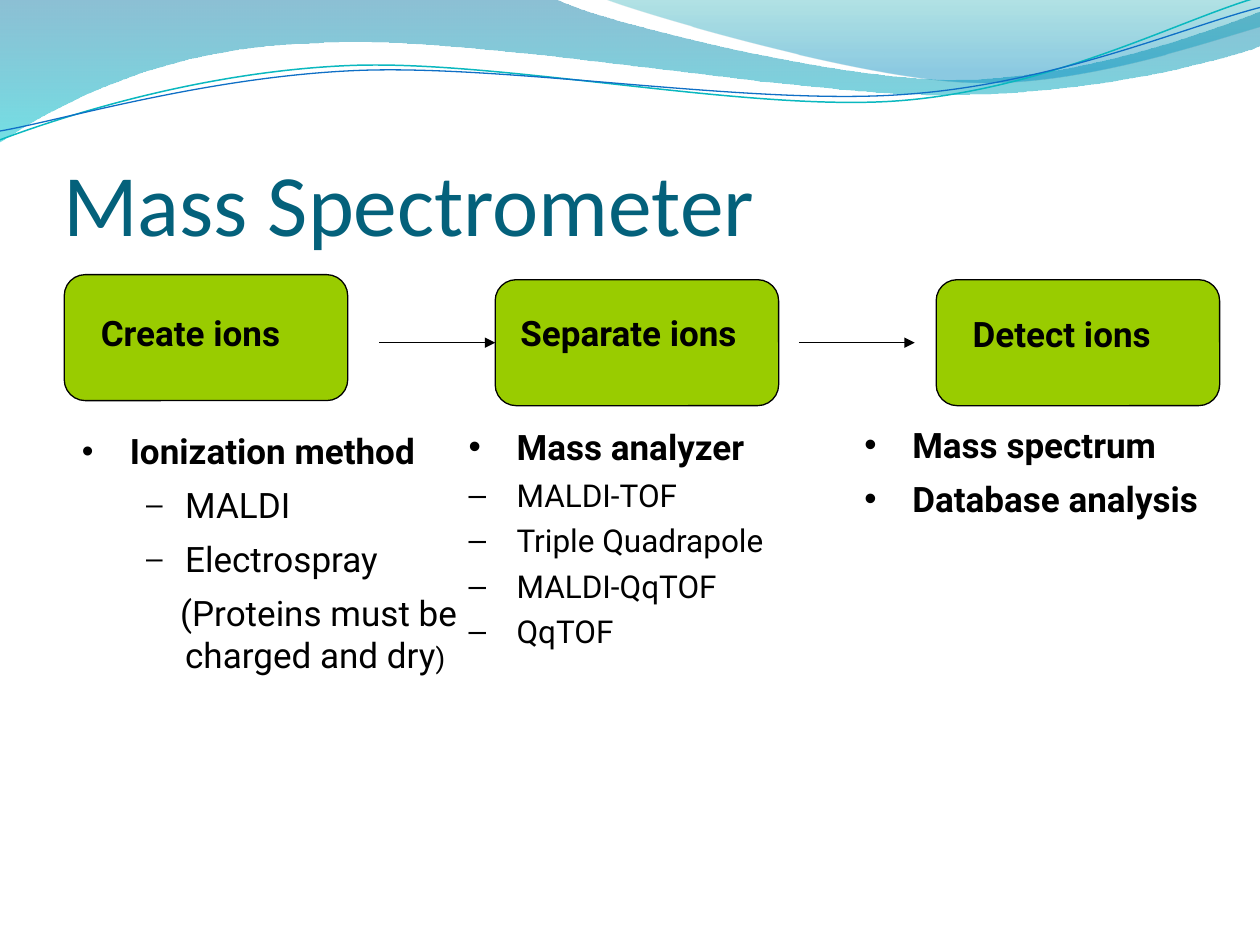
from math import cos, radians, sin

from lxml.etree import SubElement
from pptx import Presentation
from pptx.dml.color import RGBColor
from pptx.enum.shapes import MSO_CONNECTOR as Connector, MSO_SHAPE as Shape
from pptx.enum.text import MSO_ANCHOR as Anchor, MSO_AUTO_SIZE as AutoSize, PP_ALIGN as Align
from pptx.oxml.ns import qn
from pptx.util import Inches, Pt

BLACK = "000000"
GREEN = "99CC00"
BOX_WIDTH, BOX_HEIGHT = 2.25, 1
ARROW_Y, ARROW_LENGTH = 2.72, 0.92
RIPPLE_TILT = 2.7


def color(value):
    """Turn a hex string into a colour."""
    return RGBColor.from_string(value)


def place(shape, left, top, width, height):
    """Move and size a shape, in inches."""
    shape.left, shape.top = Inches(left), Inches(top)
    shape.width, shape.height = Inches(width), Inches(height)


def set_frame(frame, insets=(0, 0, 0.04, 0), anchor=Anchor.TOP):
    """Set wrapping, anchor and insets (left, top, right, bottom) of a text frame."""
    frame.word_wrap, frame.auto_size, frame.vertical_anchor = True, AutoSize.NONE, anchor
    (frame.margin_left, frame.margin_top,
     frame.margin_right, frame.margin_bottom) = map(Inches, insets)


def style_run(run, size=20, bold=False, font="Roboto", fill=BLACK):
    """Format one run."""
    run.font.size, run.font.bold, run.font.name = Pt(size), bold, font
    run.font.color.rgb = color(fill)


def set_indent(para, margin, indent, bullet=None, scale=100):
    """Give a paragraph its indents and its bullet, if any."""
    props = para._p.get_or_add_pPr()
    props.set("marL", str(Inches(margin)))
    props.set("indent", str(Inches(indent)))
    if not bullet:
        SubElement(props, qn("a:buNone"))
        return
    bullet_color = SubElement(props, qn("a:buClr"))
    SubElement(bullet_color, qn("a:srgbClr"), val=BLACK)
    SubElement(props, qn("a:buSzPct"), val=str(scale * 1000))
    SubElement(props, qn("a:buChar"), char=bullet)


def tilt(x, y, center_x, center_y):
    """Turn a point clockwise about a centre by the tilt of the ripples."""
    angle = radians(RIPPLE_TILT)
    across, down = x - center_x, y - center_y
    return (center_x + across * cos(angle) - down * sin(angle),
            center_y + across * sin(angle) + down * cos(angle))


def add_outline(page, start, segments, close, center=None):
    """Draw a freeform of lines (one point) and cubic curves (three points)."""
    points = [start] + [point for segment in segments
                        for point in zip(segment[::2], segment[1::2])]
    if center:
        points = [tilt(*point, *center) for point in points]
    corners = [(Inches(x), Inches(y)) for x, y in points]
    builder = page.shapes.build_freeform(*corners[0])
    builder.add_line_segments(corners[1:], close=close)
    shape = builder.convert_to_shape()
    shape.shadow.inherit = False
    lines = iter(list(shape._element.iter(qn("a:lnTo"))))
    for segment in segments:
        line = next(lines)
        if len(segment) == 6:
            line.tag = qn("a:cubicBezTo")
            for _ in range(2):
                control = next(lines)
                line.append(control[0])
                control.getparent().remove(control)
    return shape


def add_wave(page, start, segments, stops):
    """Fill a wave with a downward gradient of (position, colour, opacity) stops."""
    shape = add_outline(page, start, segments, True)
    shape.line.fill.background()
    shape.fill.gradient()
    shape.fill.gradient_angle = 270
    for stop, (position, value, opacity) in zip(shape.fill.gradient_stops, stops):
        stop.position = position
        stop.color.rgb = color(value)
        tint = stop._gs.find(qn("a:srgbClr"))
        SubElement(tint, qn("a:alpha"), val=str(opacity * 1000))


def add_ripple(page, center, start, curves, value, width):
    """Draw a thin curved line, tilted about its centre."""
    shape = add_outline(page, start, curves, False, center)
    shape.rotation = 360 - RIPPLE_TILT
    shape.fill.background()
    shape.line.color.rgb = color(value)
    shape.line.width = Pt(width)


def add_header(page):
    """Draw the waves and ripples along the top edge."""
    add_wave(page, (0, 0), [(4.4, -0.01), (4.76, 0.17, 6.64, 0.63, 7.58, 0.63),
                            (8.53, 0.63, 9.58, 0.26, 10, 0.09), (10.01, 0.36),
                            (9.83, 0.44, 8.7, 0.76, 7.46, 0.75),
                            (6.22, 0.75, 3.82, 0.28, 2.57, 0.34),
                            (1.29, 0.36, 0.46, 0.83, -0.01, 1.13)],
             [(0, "0074A1", 45), (1, "00C6CF", 55)])
    add_wave(page, (4.79, -0.01), [(5.09, 0.11, 6.82, 0.62, 7.69, 0.65),
                                   (8.56, 0.69, 9.61, 0.32, 10, 0.21), (10, 0)],
             [(0, "00A1A9", 30), (0.8, "008BBF", 45)])
    add_ripple(page, (4.99, 0.58), (0, 1.11), [(0.48, 0.93, 1.58, 0.57, 2.77, 0.52),
                                               (3.95, 0.47, 5.93, 0.89, 7.13, 0.8),
                                               (8.33, 0.71, 9.38, 0.15, 9.98, -0.02)],
               "0AB8BF", 0.85)
    add_ripple(page, (5, 0.59), (0, 1.04), [(0.47, 0.96, 1.64, 0.61, 2.83, 0.56),
                                            (4.03, 0.51, 5.97, 0.84, 7.17, 0.75),
                                            (8.36, 0.67, 9.41, 0.21, 10, 0.06)],
               "0F6FC6", 0.75)


def set_title(title, text, box):
    """Fill and format the title placeholder."""
    place(title, *box)
    frame = title.text_frame
    frame.text = text
    set_frame(frame, (0, 0.05, 0, 0), Anchor.BOTTOM)
    frame.paragraphs[0].alignment = Align.LEFT
    style_run(frame.paragraphs[0].runs[0], 50, False, "Calibri", "04617B")


def add_green(page, kind, box):
    """Add a green preset shape without a line."""
    shape = page.shapes.add_shape(kind, *map(Inches, box))
    shape.shadow.inherit = False
    shape.fill.solid()
    shape.fill.fore_color.rgb = color(GREEN)
    shape.line.fill.background()
    return shape


def add_stage(page, left, top):
    """Draw the rounded box of one step."""
    stage = add_green(page, Shape.ROUNDED_RECTANGLE, (left, top, BOX_WIDTH, BOX_HEIGHT))
    stage.line.color.rgb = color(BLACK)
    stage.line.width = Pt(0.75)
    return stage


def fill_label(label, text):
    """Write the name of a step."""
    label.text_frame.text = text
    set_frame(label.text_frame)
    para = label.text_frame.paragraphs[0]
    para.alignment = Align.LEFT
    set_indent(para, 0.04, 0)
    style_run(para.runs[0], bold=True)


def add_arrow(page, left):
    """Draw an arrow between two steps."""
    arrow = page.shapes.add_connector(Connector.STRAIGHT, Inches(left), Inches(ARROW_Y),
                                      Inches(left + ARROW_LENGTH), Inches(ARROW_Y))
    arrow.line.color.rgb = color(BLACK)
    arrow.line.width = Pt(0.75)
    SubElement(arrow.line._get_or_add_ln(), qn("a:tailEnd"), type="triangle")
    SubElement(arrow._element.spPr, qn("a:effectLst"))
    return arrow


def add_process(page):
    """Draw the three steps, their labels and the arrows between them."""
    add_stage(page, 0.51, 2.18)
    separate = add_stage(page, 3.93, 2.22)
    add_stage(page, 7.43, 2.22)
    add_arrow(page, 3.01).end_connect(separate, 1)
    add_arrow(page, 6.34)
    for text, left, width in (("Create ions", 0.76, 1.85), ("Separate ions", 4.09, 2.1)):
        fill_label(page.shapes.add_textbox(*map(Inches, (left, 2.47, width, 0.44))), text)
    fill_label(add_green(page, Shape.RECTANGLE, (7.68, 2.48, 1.85, 0.44)), "Detect ions")


def fill_list(body, box, items, insets=(0, 0, 0.04, 0)):
    """Fill a body placeholder with (text, level, size, bold, space, indents) items."""
    place(body, *box)
    frame = body.text_frame
    frame.text = "\n".join(item[0] for item in items)
    set_frame(frame, insets)
    for para, (_, level, size, bold, space, indents) in zip(frame.paragraphs, items):
        para.level, para.alignment = level, Align.LEFT
        para.space_before, para.line_spacing = Pt(space), 1.0
        set_indent(para, *indents)
        style_run(para.runs[0], size, bold)


def fill_lists(ionization, analyzer, detection):
    """Fill the three lists below the steps."""
    dot, dash = (0.42, -0.38, "•"), (0.42, -0.38, "–")
    inner_dash = (0.86, -0.31, "–", 85)
    fill_list(ionization, (0.51, 3.36, 3.17, 3.88), [
        ("Ionization method", 0, 20, True, 4, (*dot, 95)),
        ("MALDI", 1, 20, False, 6.8, inner_dash),
        ("Electrospray", 1, 20, False, 6.8, inner_dash),
        ("(Proteins must be charged and dry", 1, 20, False, 6.8, (0.86, -0.04)),
    ], (0.1, 0.05, 0.04, 0.05))
    bracket = ionization.text_frame.paragraphs[-1].add_run()
    bracket.text = ")"
    style_run(bracket, 16)
    analyzers = ("MALDI-TOF", "Triple Quadrapole", "MALDI-QqTOF", "QqTOF")
    fill_list(analyzer, (3.68, 3.38, 3.6, 2.82),
              [("Mass analyzer", 0, 20, True, 4.8, dot)]
              + [(name, 0, 18, False, 4.4, dash) for name in analyzers])
    fill_list(detection, (6.82, 3.36, 3.18, 2.1),
              [(name, 0, 20, True, 6.8, dot) for name in ("Mass spectrum", "Database analysis")])


def main():
    """Build the slide and save it."""
    deck = Presentation()
    deck.slide_width, deck.slide_height = Inches(10), Inches(7.5)
    page = deck.slides.add_slide(deck.slide_layouts[4])
    unused, *lists = list(page.placeholders)[1:]
    unused._element.getparent().remove(unused._element)
    add_header(page)
    set_title(page.shapes.title, "Mass Spectrometer", (0.5, 0.77, 9, 1.25))
    add_process(page)
    fill_lists(*lists)
    deck.save("out.pptx")


if __name__ == "__main__":
    main()
